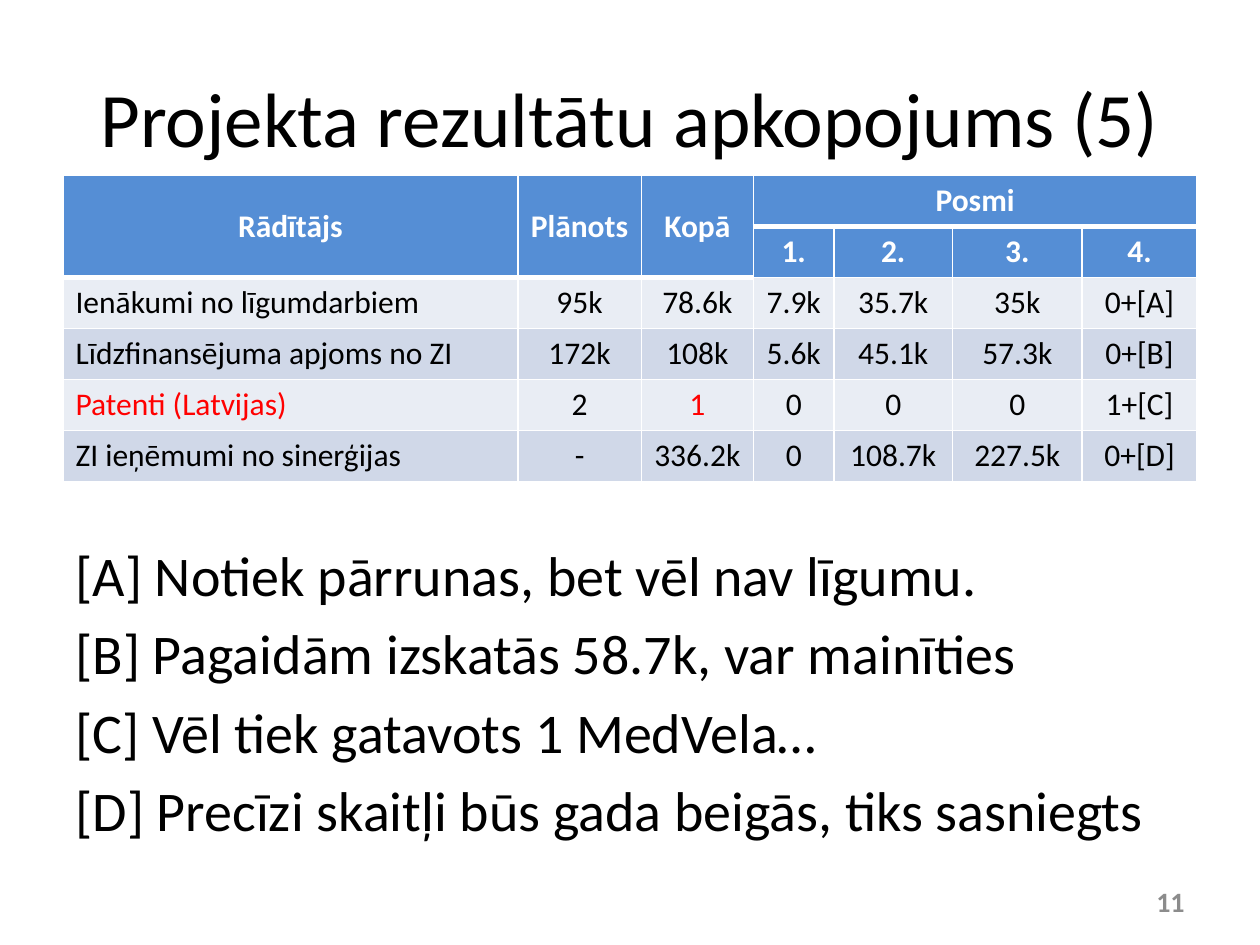
"""Build the project results summary slide with its indicator table and notes."""
from lxml.etree import SubElement
from pptx import Presentation
from pptx.dml.color import RGBColor
from pptx.enum.text import MSO_ANCHOR as Anchor, MSO_AUTO_SIZE as AutoSize, PP_ALIGN as Align
from pptx.oxml.ns import qn
from pptx.util import Inches, Pt

COLORS = {"ink": "000000", "white": "FFFFFF", "header": "558ED5", "light": "E9EDF4",
          "dark": "D0D8E8", "alert": "FF0000", "number": "8C8C8C"}
WIDTH, HEIGHT = Inches(10), Inches(7.5)
MARGIN, CONTENT = WIDTH * 0.05, WIDTH * 0.9


def write(paragraph, text, size, color="ink", bold=False, align=Align.LEFT):
    paragraph.alignment = align
    run = paragraph.add_run()
    run.text = text
    run.font.name, run.font.size, run.font.bold = "Calibri", Pt(size), bold
    run.font.color.rgb = RGBColor.from_string(COLORS[color])


def draw_borders(cell, bottom):
    properties = cell._tc.get_or_add_tcPr()
    for side, points in (("L", 1), ("R", 1), ("T", 1), ("B", bottom)):
        line = SubElement(properties, qn(f"a:ln{side}"), w=str(Pt(points)))
        fill = SubElement(line, qn("a:solidFill"))
        SubElement(fill, qn("a:srgbClr"), val=COLORS["white"])


deck = Presentation()
deck.slide_width, deck.slide_height = WIDTH, HEIGHT
slide = deck.slides.add_slide(deck.slide_layouts[1])

title = slide.shapes.title
title.left, title.top = int(MARGIN), int(HEIGHT * 0.04)
title.width, title.height = int(CONTENT), int(HEIGHT / 6)
title.text_frame.vertical_anchor = Anchor.MIDDLE
title.text_frame.auto_size = AutoSize.NONE
write(title.text_frame.paragraphs[0], "Projekta rezultātu apkopojums (5)", 44, align=Align.CENTER)

indicators = [
    ["Rādītājs", "Plānots", "Kopā", "Posmi", "", "", ""],
    ["", "", "", "1.", "2.", "3.", "4."],
    ["Ienākumi no līgumdarbiem", "95k", "78.6k", "7.9k", "35.7k", "35k", "0+[A]"],
    ["Līdzfinansējuma apjoms no ZI", "172k", "108k", "5.6k", "45.1k", "57.3k", "0+[B]"],
    ["Patenti (Latvijas)", "2", "1", "0", "0", "0", "1+[C]"],
    ["ZI ieņēmumi no sinerģijas", "-", "336.2k", "0", "108.7k", "227.5k", "0+[D]"],
]
highlighted = {(4, 0), (4, 2)}
column_shares = [3.61, 0.98, 0.89, 0.64, 0.94, 1.03, 0.91]
row_height = HEIGHT * 0.054
results = slide.shapes.add_table(len(indicators), len(column_shares), int(MARGIN), Inches(1.39),
                                 int(CONTENT), int(row_height * len(indicators))).table
for column, share in zip(results.columns, column_shares):
    column.width = int(CONTENT * share / sum(column_shares))
for row, values in enumerate(indicators):
    results.rows[row].height = int(row_height)
    is_header = row < 2
    band = "header" if is_header else ("light", "dark")[row % 2]
    for col, value in enumerate(values):
        cell = results.cell(row, col)
        draw_borders(cell, 3 if row == 0 else 1)
        cell.fill.solid()
        cell.fill.fore_color.rgb = RGBColor.from_string(COLORS[band])
        cell.vertical_anchor = Anchor.MIDDLE if is_header else Anchor.TOP
        color = "white" if is_header else "alert" if (row, col) in highlighted else "ink"
        if value:
            align = Align.CENTER if is_header or col else Align.LEFT
            write(cell.text_frame.paragraphs[0], value, 18, color, is_header, align)
for col in range(3):
    results.cell(0, col).merge(results.cell(1, col))
results.cell(0, 3).merge(results.cell(0, 6))

notes = slide.placeholders[1]
notes.left, notes.top = int(MARGIN), int(HEIGHT * 0.565)
notes.width, notes.height = int(CONTENT), int(HEIGHT * 0.33)
notes.text_frame.auto_size = AutoSize.NONE
remarks = [
    "[A] Notiek pārrunas, bet vēl nav līgumu.",
    "[B] Pagaidām izskatās 58.7k, var mainīties",
    "[C] Vēl tiek gatavots 1 MedVela…",
    "[D] Precīzi skaitļi būs gada beigās, tiks sasniegts",
]
for index, remark in enumerate(remarks):
    paragraph = notes.text_frame.add_paragraph() if index else notes.text_frame.paragraphs[0]
    paragraph.space_before = Pt(6.4 if index else 0)
    properties = paragraph._p.get_or_add_pPr()
    properties.set("marL", "0")
    properties.set("indent", "0")
    SubElement(properties, qn("a:buNone"))
    write(paragraph, remark, 32)

number_width = WIDTH * 0.233
page_number = slide.shapes.add_textbox(int(MARGIN + CONTENT - number_width), Inches(6.95),
                                       int(number_width), Inches(0.4)).text_frame
page_number.word_wrap = True
page_number.vertical_anchor = Anchor.MIDDLE
write(page_number.paragraphs[0], "11", 16, "number", True, Align.RIGHT)

deck.save("out.pptx")
